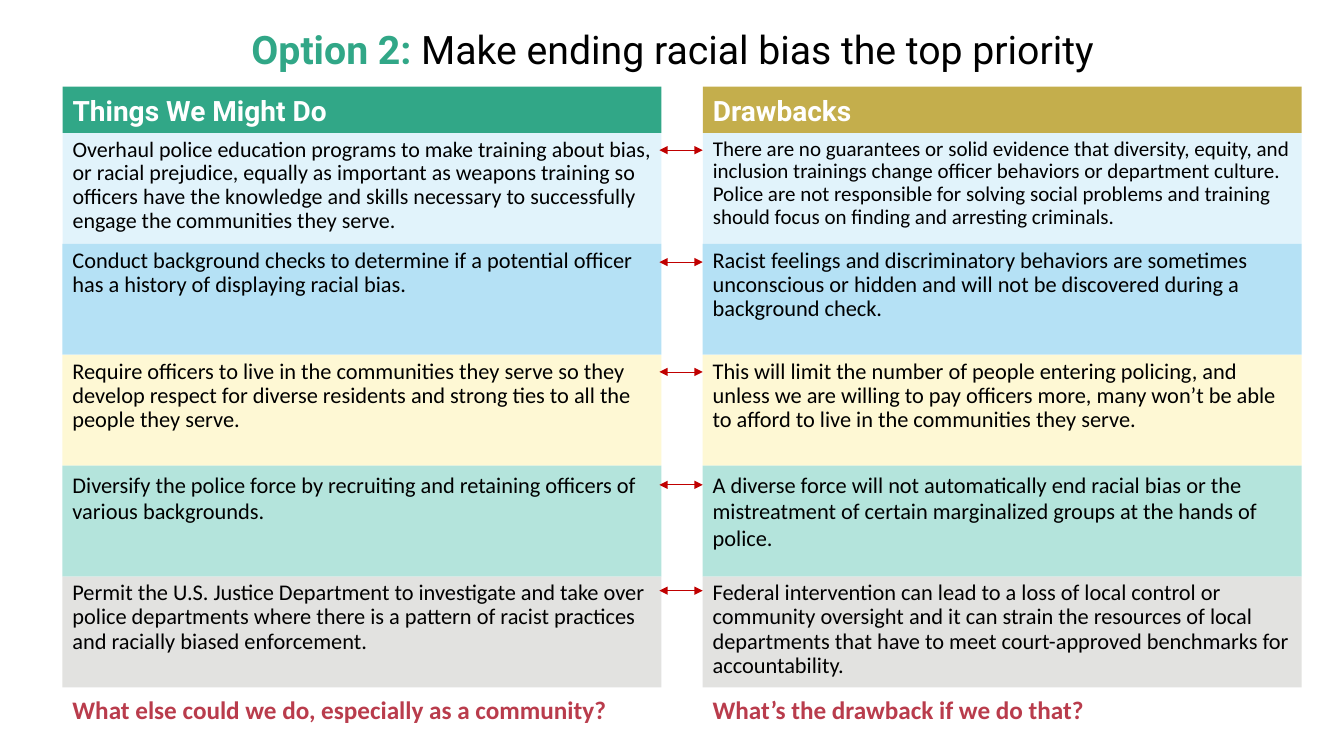
from lxml.etree import SubElement
from pptx import Presentation
from pptx.dml.color import RGBColor as Rgb
from pptx.enum.shapes import MSO_CONNECTOR as Line, MSO_SHAPE as Shape
from pptx.enum.text import MSO_ANCHOR as Anchor, MSO_AUTO_SIZE as Fit, PP_ALIGN as Align
from pptx.oxml.ns import qn
from pptx.util import Inches, Pt

WIDE, HIGH = 13.33, 7.5
LEFTS = (0.62, 6.97)
COL = 5.94
TOP, HEAD, ROW = 0.86, 0.46, 1.1

COLORS = {
    "green": "31A787", "gold": "C4AE4C", "ice": "E1F3FB", "sky": "B5E1F5",
    "cream": "FEF8D4", "mint": "B4E4DC", "gray": "E2E2E0",
    "rose": "B93C4C", "red": "C00000", "black": "000000", "white": "FFFFFF",
}

HEADS = (("Things We Might Do", "green"), ("Drawbacks", "gold"))

# fill, line spacing, arrow drop, then text and size for each column
ROWS = (
    ("ice", 0.9, 0.17,
     ("Overhaul police education programs to make training about bias, or racial "
      "prejudice, equally as important as weapons training so officers have the "
      "knowledge and skills necessary to successfully engage the communities they "
      "serve.", 15.7),
     ("There are no guarantees or solid evidence that diversity, equity, and "
      "inclusion trainings change officer behaviors or department culture. Police "
      "are not responsible for solving social problems and training should focus "
      "on finding and arresting criminals.", 15)),
    ("sky", 0.9, 0.18,
     ("Conduct background checks to determine if a potential officer has a history "
      "of displaying racial bias.", 16),
     ("Racist feelings and discriminatory behaviors are sometimes unconscious or "
      "hidden and will not be discovered during a background check.", 16)),
    ("cream", 0.9, 0.17,
     ("Require officers to live in the communities they serve so they develop "
      "respect for diverse residents and strong ties to all the people they "
      "serve.", 16),
     ("This will limit the number of people entering policing, and unless we are "
      "willing to pay officers more, many won’t be able to afford to live in the "
      "communities they serve.", 16)),
    ("mint", 1, 0.19,
     ("Diversify the police force by recruiting and retaining officers of various "
      "backgrounds.", 16),
     ("A diverse force will not automatically end racial bias or the mistreatment "
      "of certain marginalized groups at the hands of police.", 16)),
    ("gray", 0.9, 0.14,
     ("Permit the U.S. Justice Department to investigate and take over police "
      "departments where there is a pattern of racist practices and racially "
      "biased enforcement.", 16),
     ("Federal intervention can lead to a loss of local control or community "
      "oversight and it can strain the resources of local departments that have "
      "to meet court-approved benchmarks for accountability.", 16)),
)

ASKS = ("What else could we do, especially as a community?",
        "What’s the drawback if we do that?")


def color(name):
    return Rgb.from_string(COLORS[name])


def place(shape, box):
    shape.left, shape.top, shape.width, shape.height = map(Inches, box)


def paint(shape, fill):
    shape.fill.solid()
    shape.fill.fore_color.rgb = color(fill)
    shape.line.fill.background()


def write(shape, *runs, size=16, font="Calibri", bold=False, anchor=Anchor.TOP,
          align=Align.LEFT, space=1):
    """Set one paragraph from (text, color) or (text, color, bold) runs."""
    frame = shape.text_frame
    frame.word_wrap = True
    frame.auto_size = Fit.NONE
    frame.vertical_anchor = anchor
    para = frame.paragraphs[0]
    para.alignment = align
    para.line_spacing = space
    para.space_before = Pt(0)
    props = para._p.get_or_add_pPr()
    props.set("marL", "0")
    props.set("indent", "0")
    SubElement(props, qn("a:buNone"))
    for text, tint, *heavy in runs:
        run = para.add_run()
        run.text = text
        run.font.size = Pt(size)
        run.font.name = font
        run.font.bold = heavy[0] if heavy else bold
        run.font.color.rgb = color(tint)


def title(slide, box):
    shape = slide.shapes.title
    place(shape, box)
    write(shape, ("Option 2: ", "green", True),
          ("Make ending racial bias the top priority", "black"),
          size=28, font="Roboto", anchor=Anchor.MIDDLE, align=Align.CENTER,
          space=0.9)


def column(slide, side, box):
    """Stack the heading, five rows and closing question of one side."""
    left, top, width = box
    head, first = (slide.placeholders[2 * side + n] for n in (1, 2))
    text, fill = HEADS[side]
    place(head, (left, top, width, HEAD))
    paint(head, fill)
    write(head, (text, "white"), size=20, font="Roboto", bold=True,
          anchor=Anchor.BOTTOM, space=0.9)

    for n, (fill, space, _, *cells) in enumerate(ROWS):
        if n:
            cell = slide.shapes.add_shape(Shape.RECTANGLE, 0, 0, 0, 0)
            cell.shadow.inherit = False
        else:
            cell = first
        place(cell, (left, top + HEAD + n * ROW, width, ROW))
        paint(cell, fill)
        text, size = cells[side]
        write(cell, (text, "black"), size=size, space=space)

    ask = slide.shapes.add_textbox(0, 0, 0, 0)
    place(ask, (left, top + HEAD + len(ROWS) * ROW + 0.02, width, 0.4))
    write(ask, (ASKS[side], "rose"), size=18, bold=True)


def arrows(slide, box):
    """Link each pair of rows across the gap."""
    left, top, width = box
    for n, (_, _, drop, *_) in enumerate(ROWS):
        y = Inches(top + n * ROW + drop)
        link = slide.shapes.add_connector(
            Line.STRAIGHT, Inches(left), y, Inches(left + width), y)
        link.line.color.rgb = color("red")
        link.line.width = Pt(0.5)
        for end in ("a:headEnd", "a:tailEnd"):
            SubElement(link.line._get_or_add_ln(), qn(end), type="triangle")
        SubElement(link._element.spPr, qn("a:effectLst"))


def main():
    deck = Presentation()
    deck.slide_width, deck.slide_height = Inches(WIDE), Inches(HIGH)
    slide = deck.slides.add_slide(deck.slide_layouts.get_by_name("Comparison"))
    title(slide, (0.92, 0.16, 11.5, 0.7))
    for side, left in enumerate(LEFTS):
        column(slide, side, (left, TOP, COL))
    arrows(slide, (LEFTS[0] + COL - 0.02, TOP + HEAD, 0.43))
    deck.save("out.pptx")


if __name__ == "__main__":
    main()
